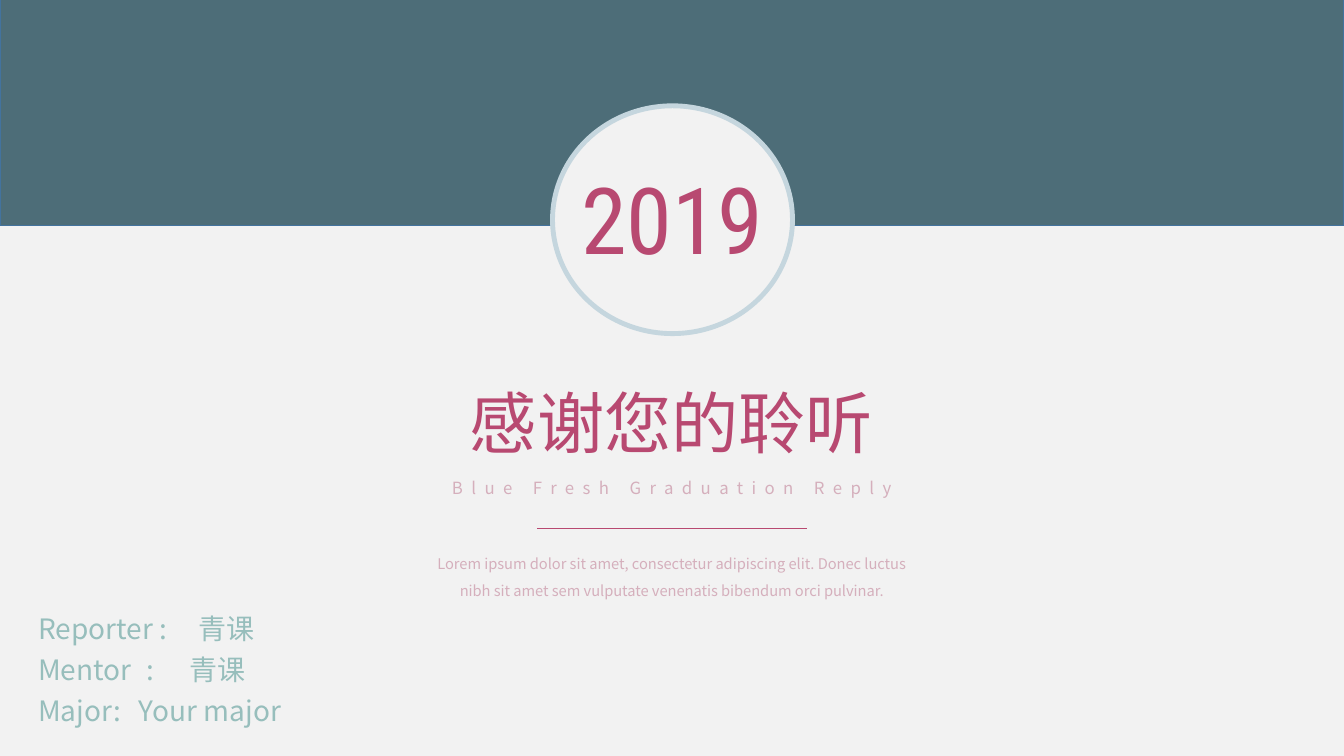
from dataclasses import dataclass

from lxml import etree
from pptx import Presentation
from pptx import util as u
from pptx.dml.color import RGBColor
from pptx.enum import shapes, text
from pptx.oxml.ns import qn

COLORS = {
    "paper": "F2F2F2",
    "slate": "4D6D78",
    "edge": "43739E",
    "ring": "C5D6DE",
    "rose": "B84971",
    "blush": "D5AFBC",
    "sage": "97BEBC",
}
SANS = "Noto Sans CJK SC"
LEFT, CENTER = text.PP_ALIGN.LEFT, text.PP_ALIGN.CENTER
RECT, OVAL = shapes.MSO_SHAPE.RECTANGLE, shapes.MSO_SHAPE.OVAL


@dataclass(frozen=True)
class Box:
    left: float
    top: float
    width: float
    height: float

    def inches(self) -> list[u.Length]:
        return [u.Inches(n) for n in (self.left, self.top, self.width, self.height)]


@dataclass(frozen=True)
class Form:
    kind: shapes.MSO_SHAPE
    box: Box
    fill: str
    edge: str
    weight: float


@dataclass(frozen=True)
class Label:
    words: str
    box: Box
    size: float
    color: str
    font: str = SANS
    align: text.PP_ALIGN = CENTER
    wrap: bool = True
    space: float = 0
    leading: float = 1
    tabs: tuple[float, ...] = ()


def rgb(name: str) -> RGBColor:
    return RGBColor.from_string(COLORS[name])


def draw_form(parent, form: Form) -> None:
    shape = parent.add_shape(form.kind, *form.box.inches())
    shape.shadow.inherit = False
    shape.fill.solid()
    shape.fill.fore_color.rgb = rgb(form.fill)
    shape.line.color.rgb = rgb(form.edge)
    shape.line.width = u.Pt(form.weight)


def draw_label(parent, label: Label) -> None:
    frame = parent.add_textbox(*label.box.inches()).text_frame
    frame.word_wrap = label.wrap
    frame.auto_size = text.MSO_AUTO_SIZE.SHAPE_TO_FIT_TEXT
    para = frame.paragraphs[0]
    para.text = label.words
    para.alignment = label.align
    para.line_spacing = label.leading
    if label.tabs:
        stops = etree.SubElement(para._p.pPr, qn("a:tabLst"))
        for stop in label.tabs:
            etree.SubElement(stops, qn("a:tab"), pos=str(u.Inches(stop)), algn="l")
    font = para.font
    font.size = u.Pt(label.size)
    font.name = label.font
    font.color.rgb = rgb(label.color)
    etree.SubElement(font._element, qn("a:ea"), typeface=label.font)
    if label.space:
        font._element.set("spc", str(int(label.space * 100)))


def draw_rule(parent, left: float, right: float, top: float) -> None:
    ends = [u.Inches(n) for n in (left, top, right, top)]
    rule = parent.add_connector(shapes.MSO_CONNECTOR.STRAIGHT, *ends)
    rule.line.color.rgb = rgb("rose")
    rule.line.width = u.Pt(0.5)
    etree.SubElement(rule._element.spPr, qn("a:effectLst"))


BAND = Form(RECT, Box(0, -0.02, 13.33, 2.26), "slate", "edge", 1)
RING = Form(OVAL, Box(5.48, 1.05, 2.38, 2.26), "paper", "ring", 3.5)
YEAR = Label("2019", Box(5.66, 1.56, 2.02, 1.21), 66, "rose",
             font="Roboto Condensed", wrap=False)
LABELS = [
    Label("感谢您的聆听", Box(2.95, 3.73, 7.42, 0.91), 48, "rose"),
    Label("Blue Fresh Graduation Reply", Box(4.02, 4.69, 5.29, 0.3), 12, "blush",
          space=6),
    Label("Lorem ipsum dolor sit amet, consectetur adipiscing elit. Donec luctus "
          "nibh sit amet sem vulputate venenatis bibendum orci pulvinar.",
          Box(4.13, 5.37, 5.07, 0.6), 10.5, "blush", leading=1.5),
]
CREDITS = [
    ("Reporter :\t青课", (1.59,)),
    ("Mentor\t:\t青课", (1.08, 1.5)),
    ("Major:\tYour major", (1,)),
]


def main() -> None:
    deck = Presentation()
    deck.slide_width, deck.slide_height = u.Inches(13.33), u.Inches(7.5)
    slide = deck.slides.add_slide(deck.slide_layouts[6])
    slide.background.fill.solid()
    slide.background.fill.fore_color.rgb = rgb("paper")

    draw_form(slide.shapes, BAND)
    badge = slide.shapes.add_group_shape().shapes
    draw_form(badge, RING)
    draw_label(badge, YEAR)
    for label in LABELS:
        draw_label(slide.shapes, label)
    for row, (words, tabs) in enumerate(CREDITS):
        box = Box(0.28, 6.02 + row * 0.405, 4, 0.44)
        draw_label(slide.shapes, Label(words, box, 20, "sage", align=LEFT, tabs=tabs))
    draw_rule(slide.shapes, 5.33, 8, 5.24)
    deck.save("out.pptx")


if __name__ == "__main__":
    main()
